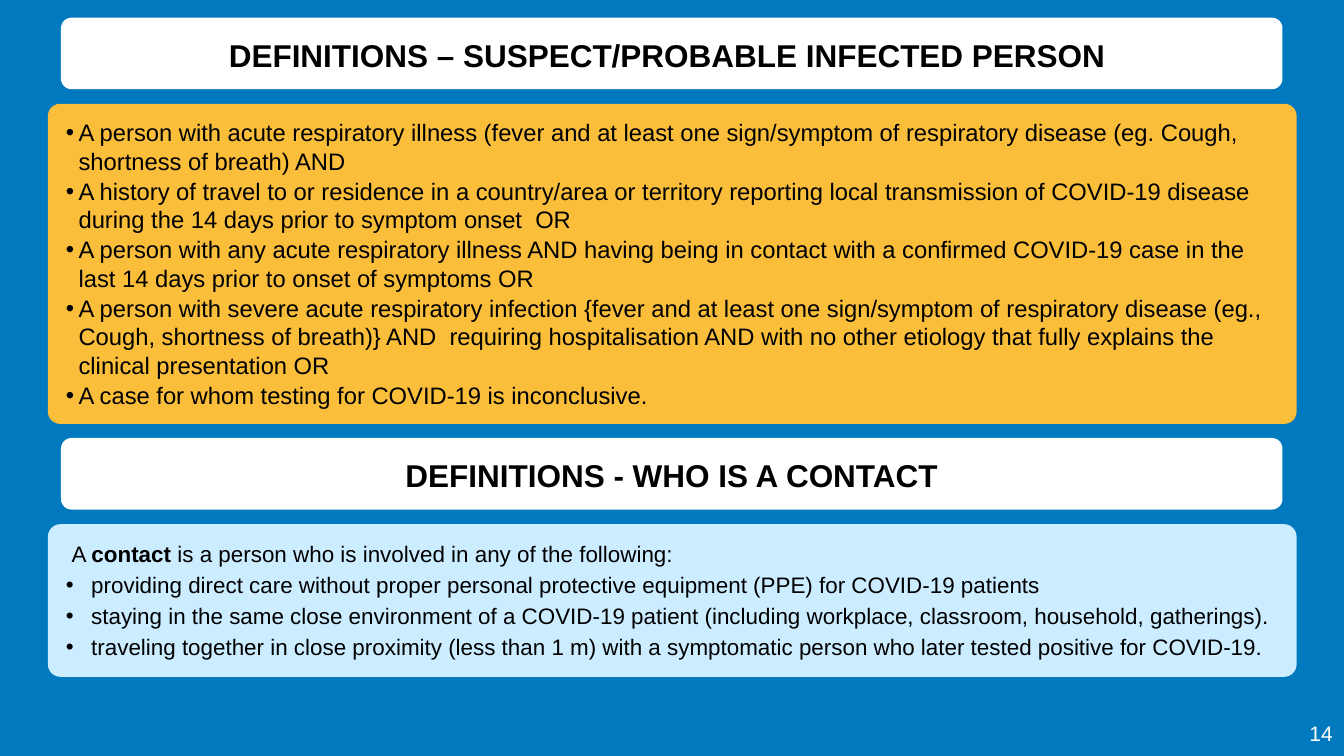
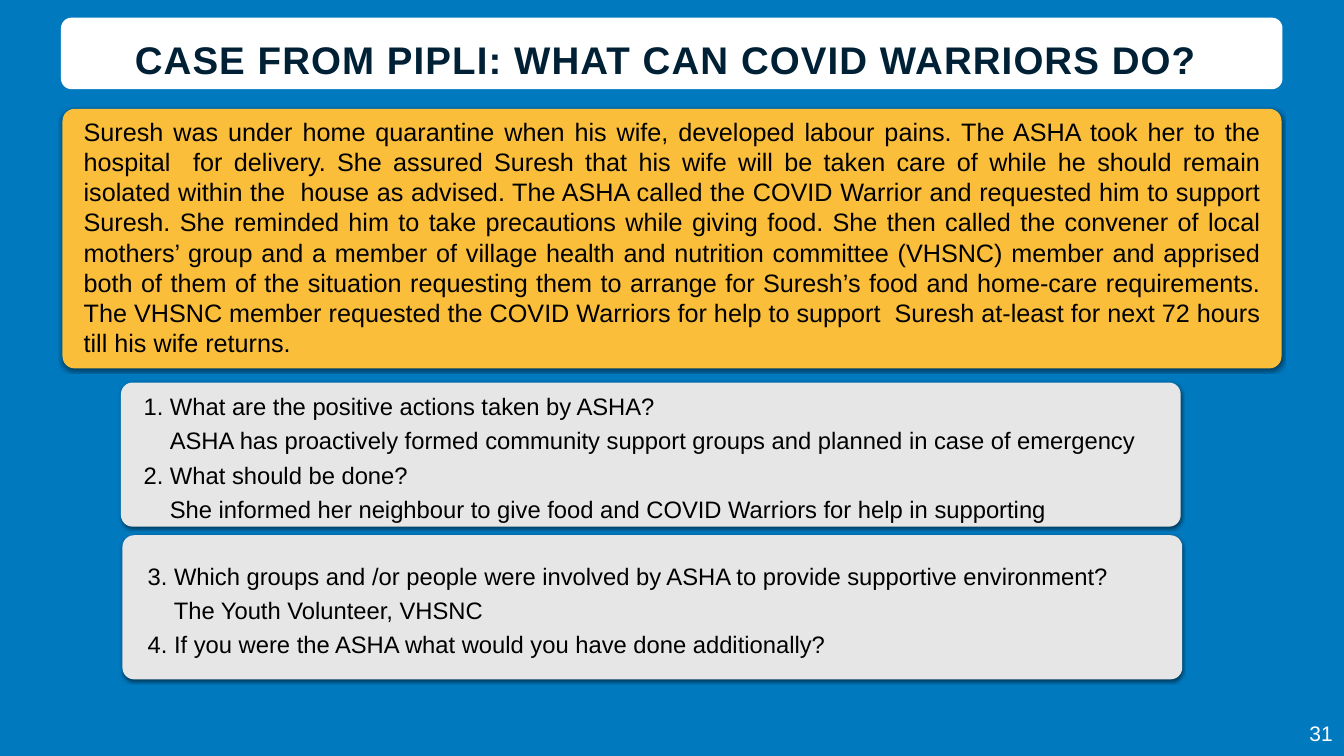
from lxml import etree
from pptx import Presentation
from pptx import util as u
from pptx.dml.color import RGBColor
from pptx.enum import shapes, text
from pptx.oxml import ns

# One px is a hundredth of an inch
PX = 9144
SLIDE_SIZE = (2667, 1500)
FONT = "Arial"

BLUE = RGBColor(0x00, 0x79, 0xBF)
AMBER = RGBColor(0xFA, 0xBE, 0x3B)
PALE_BLUE = RGBColor(0xCC, 0xEC, 0xFF)
GREY = RGBColor(0xE5, 0xE6, 0xE5)
NAVY = RGBColor(0x00, 0x21, 0x35)
BLACK = RGBColor(0x00, 0x00, 0x00)
WHITE = RGBColor(0xFF, 0xFF, 0xFF)

# Paragraph styles: size in points, lengths in px
HEADING = dict(size=45, bold=True, align=text.PP_ALIGN.CENTER)
CASE_HEADING = dict(HEADING, size=55, color=NAVY, line=1.1, tracking=160)
CRITERION = dict(size=34, before=2, hanging=25)
CONTACT_INTRO = dict(size=32, before=6, margin=11)
CONTACT_ITEM = dict(size=32, before=6, hanging=50)
STORY = dict(size=36, align=text.PP_ALIGN.JUSTIFY)
QUESTION = dict(size=34, line=1.2)
ANSWER = dict(QUESTION, margin=52)
PAGE_NUMBER = dict(size=30, color=WHITE, align=text.PP_ALIGN.CENTER)

# Title bars: (top of bar, label box, style, wording)
# Panels: card, corner radius, fill, shadow, text box, paragraphs
# A paragraph is (style, wording); a list of wordings has every second one bold
SLIDES = [
    dict(
        number="14",
        titles=[
            (35, (406, 66, 1836, 80), HEADING,
             "DEFINITIONS – SUSPECT/PROBABLE INFECTED PERSON"),
            (869, (415, 900, 1836, 80), HEADING, "DEFINITIONS - WHO IS A CONTACT"),
        ],
        panels=[
            dict(card=(95, 206, 2478, 635), radius=24, fill=AMBER, shadow=False,
                 box=(125, 242, 2416, 562), paragraphs=[
                (CRITERION, "A person with acute respiratory illness (fever and at least one "
                 "sign/symptom of respiratory disease (eg. Cough, shortness of breath) AND"),
                (CRITERION, "A history of travel to or residence in a country/area or "
                 "territory reporting local transmission of COVID-19 disease during the "
                 "14 days prior to symptom onset  OR"),
                (CRITERION, "A person with any acute respiratory illness AND having being in "
                 "contact with a confirmed COVID-19 case in the last 14 days prior to onset "
                 "of symptoms OR"),
                (CRITERION, "A person with severe acute respiratory infection {fever and at "
                 "least one sign/symptom of respiratory disease (eg., Cough, shortness of "
                 "breath)} AND  requiring hospitalisation AND with no other etiology that "
                 "fully explains the clinical presentation OR"),
                (CRITERION, "A case for whom testing for COVID-19 is inconclusive."),
            ]),
            dict(card=(95, 1040, 2478, 303), radius=25, fill=PALE_BLUE, shadow=False,
                 box=(125, 1071, 2416, 240), paragraphs=[
                (CONTACT_INTRO, ["A ", "contact",
                                 " is a person who is involved in any of the following:"]),
                (CONTACT_ITEM, "providing direct care without proper personal protective "
                 "equipment (PPE) for COVID-19 patients"),
                (CONTACT_ITEM, "staying in the same close environment of a COVID-19 patient "
                 "(including workplace, classroom, household, gatherings)."),
                (CONTACT_ITEM, "traveling together in close proximity (less than 1 m) with a "
                 "symptomatic person who later tested positive for COVID-19."),
            ]),
        ],
    ),
    dict(
        number="31",
        titles=[
            (35, (206, 58, 2231, 96), CASE_HEADING,
             "CASE FROM PIPLI: WHAT CAN COVID WARRIORS DO?"),
        ],
        panels=[
            dict(card=(124, 216, 2419, 515), radius=24, fill=AMBER, shadow=True,
                 box=(160, 232, 2348, 476), paragraphs=[
                (STORY, "Suresh was under home quarantine when his wife, developed labour "
                 "pains. The ASHA took her to the hospital  for delivery. She assured Suresh "
                 "that his wife will be taken care of while he should remain isolated within "
                 "the  house as advised. The ASHA called the COVID Warrior and requested him "
                 "to support Suresh. She reminded him to take precautions while giving food. "
                 "She then called the convener of local mothers’ group and a member of "
                 "village health and nutrition committee (VHSNC) member and apprised both of "
                 "them of the situation requesting them to arrange for Suresh’s food and "
                 "home-care requirements. The VHSNC member requested the COVID Warriors for "
                 "help to support  Suresh at-least for next 72 hours till his wife returns."),
            ]),
            dict(card=(240, 759, 2103, 286), radius=23, fill=GREY, shadow=True,
                 box=(279, 773, 2010, 258), paragraphs=[
                (QUESTION, "1. What are the positive actions taken by ASHA?"),
                (ANSWER, "ASHA has proactively formed community support groups and planned "
                 "in case of emergency"),
                (QUESTION, "2. What should be done?"),
                (ANSWER, "She informed her neighbour to give food and COVID Warriors for "
                 "help in supporting"),
            ]),
            dict(card=(243, 1062, 2103, 286), radius=23, fill=GREY, shadow=True,
                 box=(287, 1108, 2054, 193), paragraphs=[
                (QUESTION, "3. Which groups and /or people were involved by ASHA to provide "
                 "supportive environment?"),
                (ANSWER, "The Youth Volunteer, VHSNC"),
                (QUESTION, "4. If you were the ASHA what would you have done additionally?"),
            ]),
        ],
    ),
]


def emu(lengths):
    return [length * PX for length in lengths]


def add_shadow(shape):
    """Soft black shadow straight below the shape."""
    effects = shape._element.spPr.find(ns.qn("a:effectLst"))
    outer = etree.SubElement(effects, ns.qn("a:outerShdw"), blurRad=str(u.Pt(5)),
                             dist=str(u.Pt(2)), dir="5400000", rotWithShape="0")
    black = etree.SubElement(outer, ns.qn("a:srgbClr"), val="000000")
    etree.SubElement(black, ns.qn("a:alpha"), val="50000")


def add_card(container, box, radius, fill, shadow=False):
    card = container.add_shape(shapes.MSO_SHAPE.ROUNDED_RECTANGLE, *emu(box))
    card.adjustments[0] = radius / box[3]
    card.fill.solid()
    card.fill.fore_color.rgb = fill
    card.line.fill.background()
    card.shadow.inherit = False
    if shadow:
        add_shadow(card)


def fill_paragraph(paragraph, style, wording):
    paragraph.alignment = style.get("align", text.PP_ALIGN.LEFT)
    paragraph.line_spacing = style.get("line")
    if "before" in style:
        paragraph.space_before = u.Pt(style["before"])

    # Indents and bullets
    properties = paragraph._p.get_or_add_pPr()
    hanging = style.get("hanging", 0)
    properties.set("marL", str(style.get("margin", hanging) * PX))
    properties.set("indent", str(-hanging * PX))
    if hanging:
        etree.SubElement(properties, ns.qn("a:buFont"), typeface=FONT)
        etree.SubElement(properties, ns.qn("a:buChar"), char="•")

    font = paragraph.font
    font.name = FONT
    font.size = u.Pt(style["size"])
    font.bold = style.get("bold", False)
    font.color.rgb = style.get("color", BLACK)

    for index, part in enumerate([wording] if isinstance(wording, str) else wording):
        run = paragraph.add_run()
        run.text = part
        if index % 2:
            run.font.bold = True
        if "tracking" in style:
            run._r.get_or_add_rPr().set("spc", str(style["tracking"]))


def add_text(container, box, paragraphs, inset=6, anchor=text.MSO_ANCHOR.MIDDLE, wrap=True):
    frame = container.add_textbox(*emu(box)).text_frame
    frame.word_wrap = wrap
    frame.auto_size = text.MSO_AUTO_SIZE.SHAPE_TO_FIT_TEXT
    frame.vertical_anchor = anchor
    frame.margin_left = frame.margin_right = inset * PX
    frame.margin_top = frame.margin_bottom = inset * PX
    for index, (style, wording) in enumerate(paragraphs):
        paragraph = frame.add_paragraph() if index else frame.paragraphs[0]
        fill_paragraph(paragraph, style, wording)


def add_title(slide, top, box, style, wording):
    group = slide.shapes.add_group_shape().shapes
    add_card(group, (121, top, 2424, 142), 21, WHITE)
    add_text(group, box, [(style, wording)], inset=5, anchor=text.MSO_ANCHOR.TOP)


def build_slide(presentation, content):
    slide = presentation.slides.add_slide(presentation.slide_layouts[6])
    slide.background.fill.solid()
    slide.background.fill.fore_color.rgb = BLUE
    for panel in content["panels"]:
        add_card(slide.shapes, panel["card"], panel["radius"], panel["fill"], panel["shadow"])
        add_text(slide.shapes, panel["box"], panel["paragraphs"])
    for title in content["titles"]:
        add_title(slide, *title)
    add_text(slide.shapes, (2592, 1426, 59, 57), [(PAGE_NUMBER, content["number"])], wrap=False)


def main():
    presentation = Presentation()
    presentation.slide_width, presentation.slide_height = emu(SLIDE_SIZE)
    for content in SLIDES:
        build_slide(presentation, content)
    presentation.save("out.pptx")


if __name__ == "__main__":
    main()
